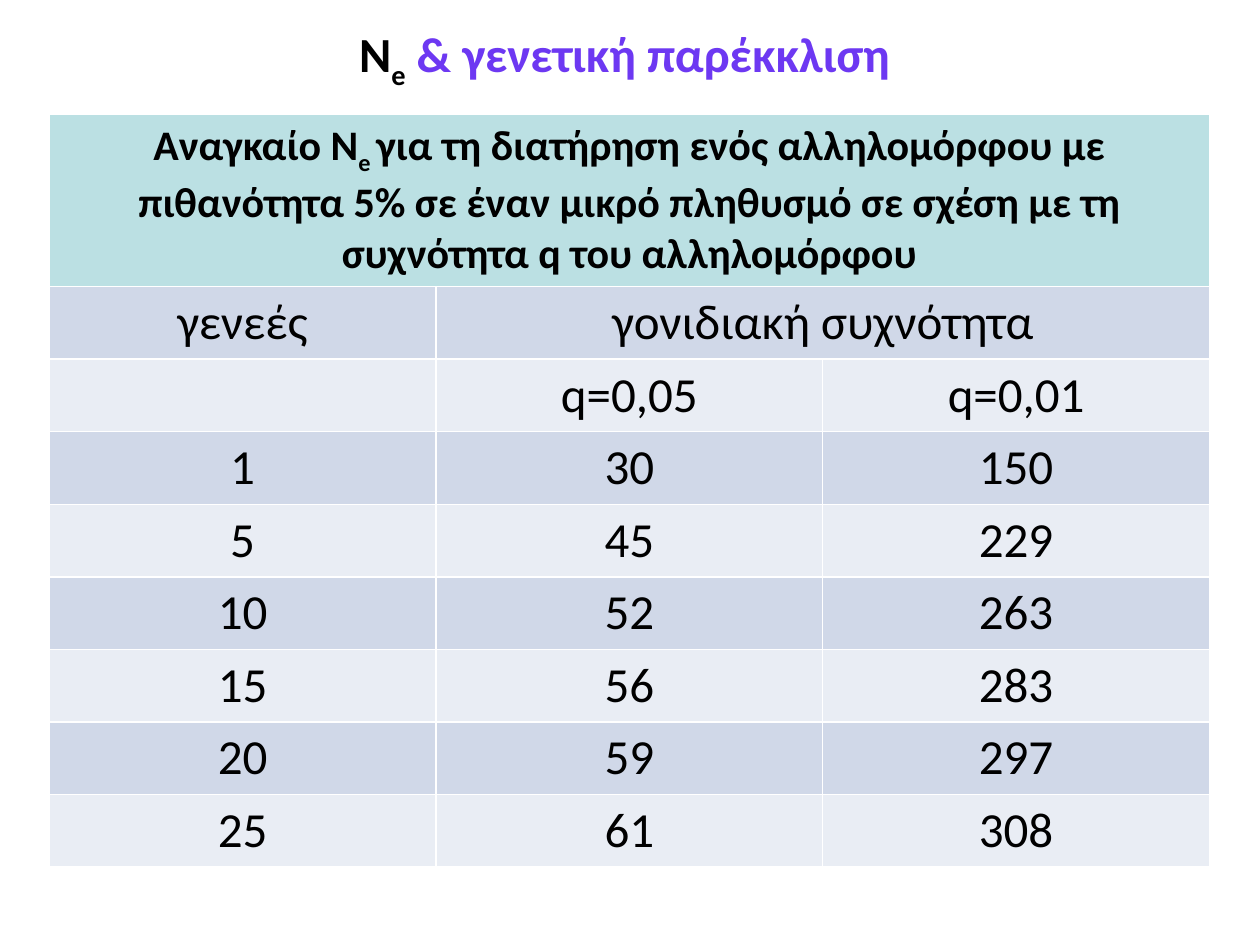
from dataclasses import dataclass

from pptx import Presentation
from pptx.dml.color import RGBColor
from pptx.enum.text import MSO_ANCHOR, PP_ALIGN
from pptx.util import Inches, Pt

CENTER = PP_ALIGN.CENTER
MIDDLE = MSO_ANCHOR.MIDDLE
TITLE_ONLY = 5


@dataclass(frozen=True)
class Theme:
    font: str = "Calibri"
    text: RGBColor = RGBColor(0x00, 0x00, 0x00)
    accent: RGBColor = RGBColor(0x6D, 0x38, 0xF2)
    heading_fill: RGBColor = RGBColor(0xBB, 0xE0, 0xE3)
    bands: tuple = (RGBColor(0xE9, 0xED, 0xF4), RGBColor(0xD0, 0xD8, 0xE8))
    large: Pt = Pt(28)
    heading: Pt = Pt(24)


theme = Theme()


def write_runs(tf, parts, size, bold):
    """Fill one centred paragraph from (text, colour, is_subscript) parts."""
    p = tf.paragraphs[0]
    p.alignment = CENTER
    for text, color, subscript in parts:
        r = p.add_run()
        r.text = text
        r.font.name = theme.font
        r.font.size = size
        r.font.bold = bold
        r.font.color.rgb = color
        if subscript:
            r._r.get_or_add_rPr().set("baseline", "-25000")


prs = Presentation()
prs.slide_width, prs.slide_height = Inches(10), Inches(7.5)
s = prs.slides.add_slide(prs.slide_layouts[TITLE_ONLY])

title = s.shapes.title
title.left, title.top = Inches(0.5), Inches(0)
title.width, title.height = Inches(9), Inches(0.91)
title.text_frame.vertical_anchor = MIDDLE
write_runs(title.text_frame, [
    ("Ν", theme.text, False),
    ("e", theme.text, True),
    (" & γενετική παρέκκλιση ", theme.accent, False),
], theme.large, True)

heading = [
    ("Αναγκαίο Ν", theme.text, False),
    ("e ", theme.text, True),
    ("για τη διατήρηση ενός αλληλομόρφου με πιθανότητα 5% σε έναν μικρό "
     "πληθυσμό σε σχέση με τη συχνότητα q του αλληλομόρφου", theme.text, False),
]
rows = [
    ("γενεές", "γονιδιακή συχνότητα", ""),
    ("", "q=0,05", "q=0,01"),
    ("1", "30", "150"),
    ("5", "45", "229"),
    ("10", "52", "263"),
    ("15", "56", "283"),
    ("20", "59", "297"),
    ("25", "61", "308"),
]

frame = s.shapes.add_table(len(rows) + 1, 3, Inches(0.39), Inches(0.91),
                           Inches(9.21), Inches(5.83))
table = frame.table
for column in table.columns:
    column.width = Inches(3.07)
for i, row in enumerate(table.rows):
    row.height = Inches(0.48 if i else 1.19)
    for cell in row.cells:
        cell.fill.solid()
        cell.fill.fore_color.rgb = theme.bands[i % 2] if i else theme.heading_fill
frame.height = Inches(5.83)

table.cell(0, 0).merge(table.cell(0, 2))
table.cell(1, 1).merge(table.cell(1, 2))

write_runs(table.cell(0, 0).text_frame, heading, theme.heading, True)
for i, values in enumerate(rows, start=1):
    for j, value in enumerate(values):
        if value:
            write_runs(table.cell(i, j).text_frame, [(value, theme.text, False)],
                       theme.large, False)

prs.save("out.pptx")
